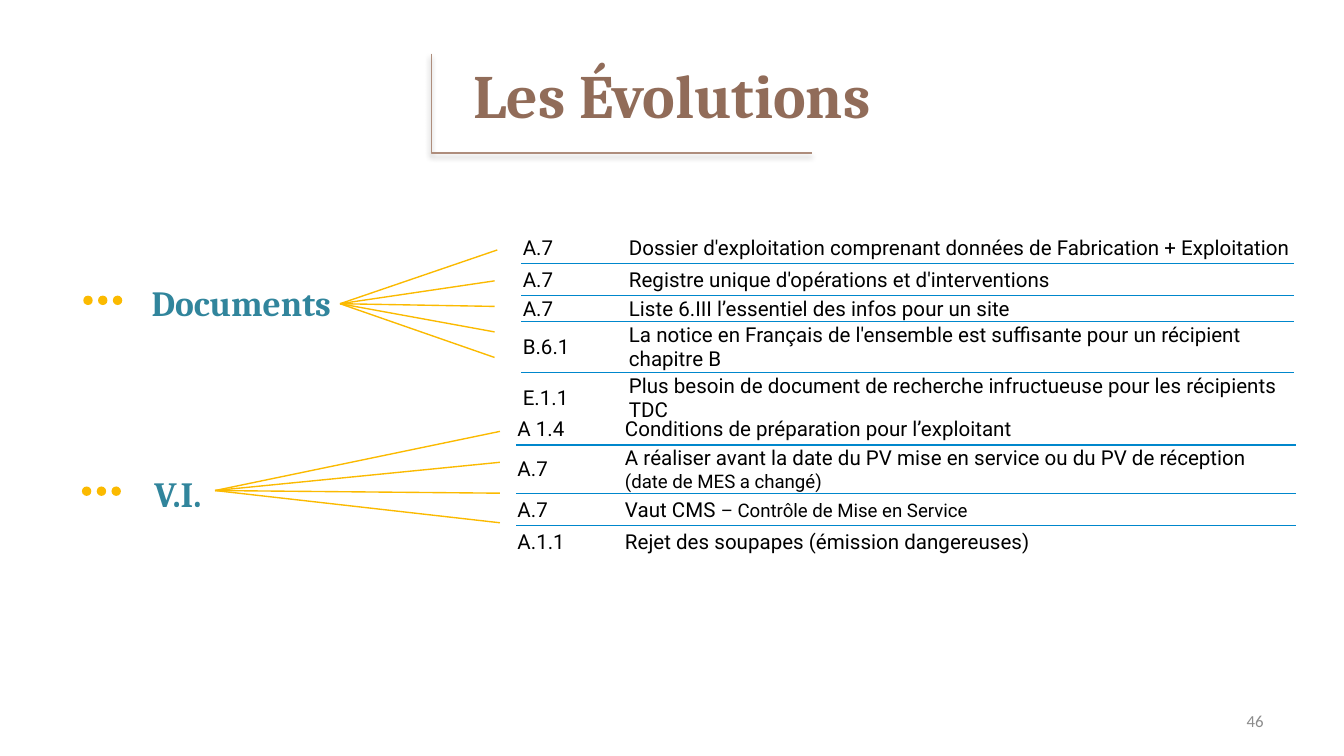
from dataclasses import dataclass

from lxml.etree import SubElement
from pptx import Presentation
from pptx.dml.color import RGBColor
from pptx.enum.shapes import MSO_CONNECTOR, MSO_SHAPE
from pptx.enum.text import MSO_ANCHOR, PP_ALIGN
from pptx.oxml import parse_xml
from pptx.oxml.ns import nsdecls, qn
from pptx.util import Inches, Pt


@dataclass(frozen=True)
class Theme:
    title: str = "916C59"
    frame: str = "AE8D7C"
    heading: str = "31859C"
    accent: str = "FBBA00"
    rule: str = "0087CC"
    body: str = "000000"
    number: str = "8C8C8C"
    serif: str = "Cambria"
    sans: str = "Roboto"
    number_font: str = "Calibri"
    title_size: float = 33
    heading_size: float = 19
    body_size: float = 11
    detail_size: float = 10
    number_size: float = 9
    line_width: float = 0.75


theme = Theme()


def style_font(font, name, size, color, bold=False):
    font.name = name
    font.size = Pt(size)
    font.bold = bold
    font.color.rgb = RGBColor.from_string(color)


def add_text(left, top, width, height, text):
    box = slide.shapes.add_textbox(Inches(left), Inches(top), Inches(width), Inches(height))
    box.text_frame.word_wrap = True
    paragraph = box.text_frame.paragraphs[0]
    paragraph.text = text
    return box.text_frame, paragraph


presentation = Presentation()
presentation.slide_width = Inches(10)
presentation.slide_height = Inches(10 * 9 / 16)
slide = presentation.slides.add_slide(presentation.slide_layouts[5])

title = slide.shapes.title
title.left, title.top = Inches(0.5), Inches(0.23)
title.width, title.height = Inches(9), Inches(0.94)
title.text_frame.text = "Les Évolutions"
title.text_frame.vertical_anchor = MSO_ANCHOR.MIDDLE
paragraph = title.text_frame.paragraphs[0]
paragraph.alignment = PP_ALIGN.CENTER
style_font(paragraph.runs[0].font, theme.serif, theme.title_size, theme.title, True)

number_frame, paragraph = add_text(7.17, 5.21, 2.33, 0.3, "46")
number_frame.vertical_anchor = MSO_ANCHOR.MIDDLE
paragraph.alignment = PP_ALIGN.RIGHT
style_font(paragraph.runs[0].font, theme.number_font, theme.number_size, theme.number)

sections = [
    {
        "heading": "Documents",
        "heading_at": (1.03, 2.01),
        "dots_at": (0.62, 2.2),
        "fan_from": (2.53, 2.26),
        "fan_to": [(3.7, 1.86), (3.68, 2.09), (3.68, 2.28), (3.68, 2.47), (3.68, 2.66)],
        "table_at": (3.88, 1.72),
        "table_height": 1.42,
        "columns": (0.79, 4.96),
        "rows": [
            (0.24, "A.7", "Dossier d'exploitation comprenant données de Fabrication + Exploitation", ""),
            (0.24, "A.7", "Registre unique d'opérations et d'interventions", ""),
            (0.12, "A.7", "Liste 6.III l’essentiel des infos pour un site", ""),
            (0, "B.6.1", "La notice en Français de l'ensemble est suffisante pour un récipient chapitre B", ""),
            (0.24, "E.1.1", "Plus besoin de document de recherche infructueuse pour les récipients TDC", ""),
        ],
    },
    {
        "heading": "V.I.",
        "heading_at": (1.05, 3.43),
        "dots_at": (0.61, 3.62),
        "fan_from": (1.6, 3.65),
        "fan_to": [(3.72, 3.21), (3.72, 3.44), (3.72, 3.67), (3.72, 3.89)],
        "table_at": (3.84, 3.07),
        "table_height": 1.07,
        "columns": (0.8, 5),
        "rows": [
            (0.24, "A 1.4", "Conditions de préparation pour l’exploitant", ""),
            (0.24, "A.7", "A réaliser avant la date du PV mise en service ou du PV de réception ",
             "(date de MES a changé)"),
            (0.24, "A.7", "Vaut CMS ", "– Contrôle de Mise en Service"),
            (0.24, "A.1.1", "Rejet des soupapes (émission dangereuses)", ""),
        ],
    },
]

for section in sections:
    dots = slide.shapes.add_group_shape()
    left, top = section["dots_at"]
    for index in range(3):
        dot = dots.shapes.add_shape(
            MSO_SHAPE.OVAL, Inches(left + 0.11 * index), Inches(top), Inches(0.07), Inches(0.07))
        dot.shadow.inherit = False
        dot.fill.solid()
        dot.fill.fore_color.rgb = RGBColor.from_string(theme.accent)
        dot.line.fill.background()

    heading_frame, paragraph = add_text(*section["heading_at"], 2.9, 0.44, section["heading"])
    paragraph.line_spacing = 1.1
    style_font(paragraph.runs[0].font, theme.serif, theme.heading_size, theme.heading, True)

    start_x, start_y = section["fan_from"]
    for end_x, end_y in section["fan_to"]:
        ray = slide.shapes.add_connector(
            MSO_CONNECTOR.STRAIGHT, Inches(start_x), Inches(start_y), Inches(end_x), Inches(end_y))
        ray.line.color.rgb = RGBColor.from_string(theme.accent)
        ray.line.width = Pt(theme.line_width)
        SubElement(ray._element.spPr, qn("a:effectLst"))

    rows = section["rows"]
    left, top = section["table_at"]
    table_shape = slide.shapes.add_table(
        len(rows), 2, Inches(left), Inches(top),
        Inches(sum(section["columns"])), Inches(section["table_height"]))
    table = table_shape.table
    table.first_row = table.horz_banding = False
    table._tbl.tblPr.find(qn("a:tableStyleId")).text = "{2D5ABB26-0587-4C30-8999-92F81FD0307C}"
    for column, width in zip(table.columns, section["columns"]):
        column.width = Inches(width)

    for row_index, (height, reference, text, detail) in enumerate(rows):
        table.rows[row_index].height = Inches(height)
        for cell, content in zip(table.rows[row_index].cells, ([reference], [text, detail])):
            cell.vertical_anchor = MSO_ANCHOR.MIDDLE
            cell.margin_left = cell.margin_top = cell.margin_right = Inches(0.01)
            cell.margin_bottom = Inches(0)
            cell.fill.background()
            paragraph = cell.text_frame.paragraphs[0]
            for part, size in zip(content, (theme.body_size, theme.detail_size)):
                if part:
                    run = paragraph.add_run()
                    run.text = part
                    style_font(run.font, theme.sans, size, theme.body)
            if row_index < len(rows) - 1:
                cell._tc.get_or_add_tcPr().insert(0, parse_xml(
                    f'<a:lnB {nsdecls("a")} w="12700"><a:solidFill>'
                    f'<a:srgbClr val="{theme.rule}"/></a:solidFill></a:lnB>'))
    table_shape.height = Inches(section["table_height"])

builder = slide.shapes.build_freeform(Inches(3.21), Inches(0.4))
builder.add_line_segments(
    [(Inches(3.21), Inches(1.14)), (Inches(6.04), Inches(1.14))], close=False)
title_frame = builder.convert_to_shape()
title_frame.fill.background()
title_frame.line.color.rgb = RGBColor.from_string(theme.frame)
title_frame.line.width = Pt(theme.line_width)
title_frame._element.spPr.append(parse_xml(
    f'<a:effectLst {nsdecls("a")}><a:outerShdw blurRad="39370" dist="22860" dir="5400000" '
    'rotWithShape="0"><a:srgbClr val="000000"><a:alpha val="35000"/></a:srgbClr>'
    '</a:outerShdw></a:effectLst>'))

presentation.save("out.pptx")
